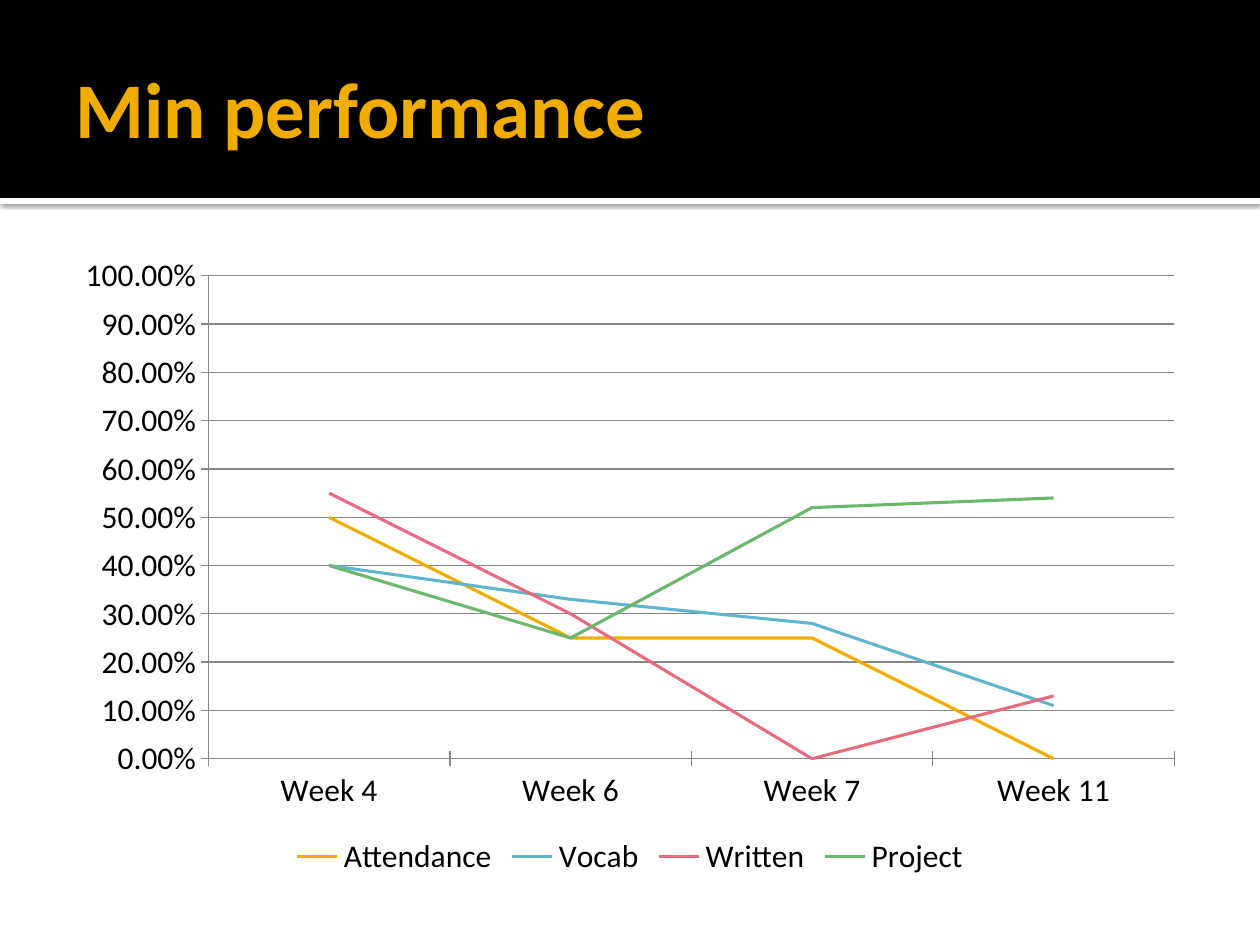
from lxml import etree
from pptx import Presentation
from pptx.chart.data import CategoryChartData
from pptx.dml.color import RGBColor
from pptx.enum.chart import XL_CHART_TYPE, XL_LEGEND_POSITION, XL_MARKER_STYLE, XL_TICK_MARK
from pptx.enum.shapes import MSO_SHAPE
from pptx.enum.text import MSO_ANCHOR, MSO_AUTO_SIZE, PP_ALIGN
from pptx.oxml.ns import qn
from pptx.util import Inches, Pt

PX_PER_INCH = 126
FONT = "Calibri"
COLORS = {
    "band": "000000",
    "strip": "FFFFFF",
    "title": "F0AD00",
    "text": "000000",
    "grid": "878787",
    "Attendance": "F0AD00",
    "Vocab": "60B5CC",
    "Written": "E66C7D",
    "Project": "6BB76D",
}
WEEKS = ["Week 4", "Week 6", "Week 7", "Week 11"]
SCORES = {
    "Attendance": [0.5, 0.25, 0.25, 0],
    "Vocab": [0.4, 0.33, 0.28, 0.11],
    "Written": [0.55, 0.3, 0, 0.13],
    "Project": [0.4, 0.25, 0.52, 0.54],
}


def px(length):
    return Inches(length / PX_PER_INCH)


def color(name):
    return RGBColor.from_string(COLORS[name])


def format_font(font, size, fill, bold=False):
    font.name = FONT
    font.size = Pt(size)
    font.bold = bold
    font.color.rgb = color(fill)


def write_text(frame, text, align=PP_ALIGN.LEFT, **font_format):
    paragraph = frame.paragraphs[0]
    paragraph.alignment = align
    run = paragraph.add_run()
    run.text = text
    format_font(run.font, **font_format)


def add_bar(slide, left, top, width, height, fill):
    bar = slide.shapes.add_shape(MSO_SHAPE.RECTANGLE, px(left), px(top), px(width), px(height))
    bar.shadow.inherit = False
    bar.fill.solid()
    bar.fill.fore_color.rgb = color(fill)
    bar.line.fill.background()
    return bar


def add_drop_shadow(bar, blur, distance, opacity):
    effects = bar.element.spPr.find(qn("a:effectLst"))
    shadow = etree.SubElement(effects, qn("a:outerShdw"), blurRad=str(Pt(blur)),
                              dist=str(Pt(distance)), dir="5400000", rotWithShape="0")
    tint = etree.SubElement(shadow, qn("a:srgbClr"), val=COLORS["band"])
    etree.SubElement(tint, qn("a:alpha"), val=str(opacity * 1000))


def build_header(slide, left, top, width, height):
    strip_height = 6
    band_height = height - strip_height
    strip = add_bar(slide, left, top + band_height, width, strip_height, "strip")
    add_drop_shadow(strip, blur=2.5, distance=0.8, opacity=60)
    add_bar(slide, left, top, width, band_height, "band")

    title = slide.shapes.title
    title.left, title.top = px(left + 63), px(top + 21)
    title.width, title.height = px(width - 2 * 63), px(173)
    title.element.getparent().append(title.element)  # in front of the band
    frame = title.text_frame
    frame.word_wrap = True
    frame.auto_size = MSO_AUTO_SIZE.NONE
    frame.vertical_anchor = MSO_ANCHOR.MIDDLE
    frame.margin_left = Inches(0.1)
    frame.margin_top = frame.margin_right = frame.margin_bottom = Inches(0.05)
    write_text(frame, "Min performance", size=45, fill="title", bold=True)


def format_grid_line(line):
    line.color.rgb = color("grid")
    line.width = Pt(0.75)


def build_chart(slide, left, top, width, height):
    data = CategoryChartData(number_format="0.00%")
    data.categories = WEEKS
    for name, values in SCORES.items():
        data.add_series(name, values)
    chart = slide.shapes.add_chart(XL_CHART_TYPE.LINE, px(left), px(top),
                                   px(width), px(height), data).chart
    format_font(chart.font, size=18, fill="text")
    chart.has_title = False
    chart.has_legend = True
    chart.legend.position = XL_LEGEND_POSITION.BOTTOM
    chart.legend.include_in_layout = False

    for axis in (chart.category_axis, chart.value_axis):
        axis.major_tick_mark = XL_TICK_MARK.CROSS
        format_grid_line(axis.format.line)
    scale = chart.value_axis
    scale.minimum_scale, scale.maximum_scale, scale.major_unit = 0, 1, 0.1
    scale.tick_labels.number_format = "0.00%"
    scale.tick_labels.number_format_is_linked = False
    scale.has_major_gridlines = True
    format_grid_line(scale.major_gridlines.format.line)

    plot = chart.plots[0]
    plot.vary_by_categories = False
    for series in plot.series:
        series.smooth = False
        series.marker.style = XL_MARKER_STYLE.NONE
        series.format.line.color.rgb = color(series.name)
        series.format.line.width = Pt(1.75)


def main():
    deck = Presentation()
    deck.slide_width, deck.slide_height = Inches(10), Inches(7.5)
    slide = deck.slides.add_slide(deck.slide_layouts[5])
    build_header(slide, 0, 0, 1260, 204)
    build_chart(slide, 63, 244, 1134, 638)
    deck.save("out.pptx")


if __name__ == "__main__":
    main()
